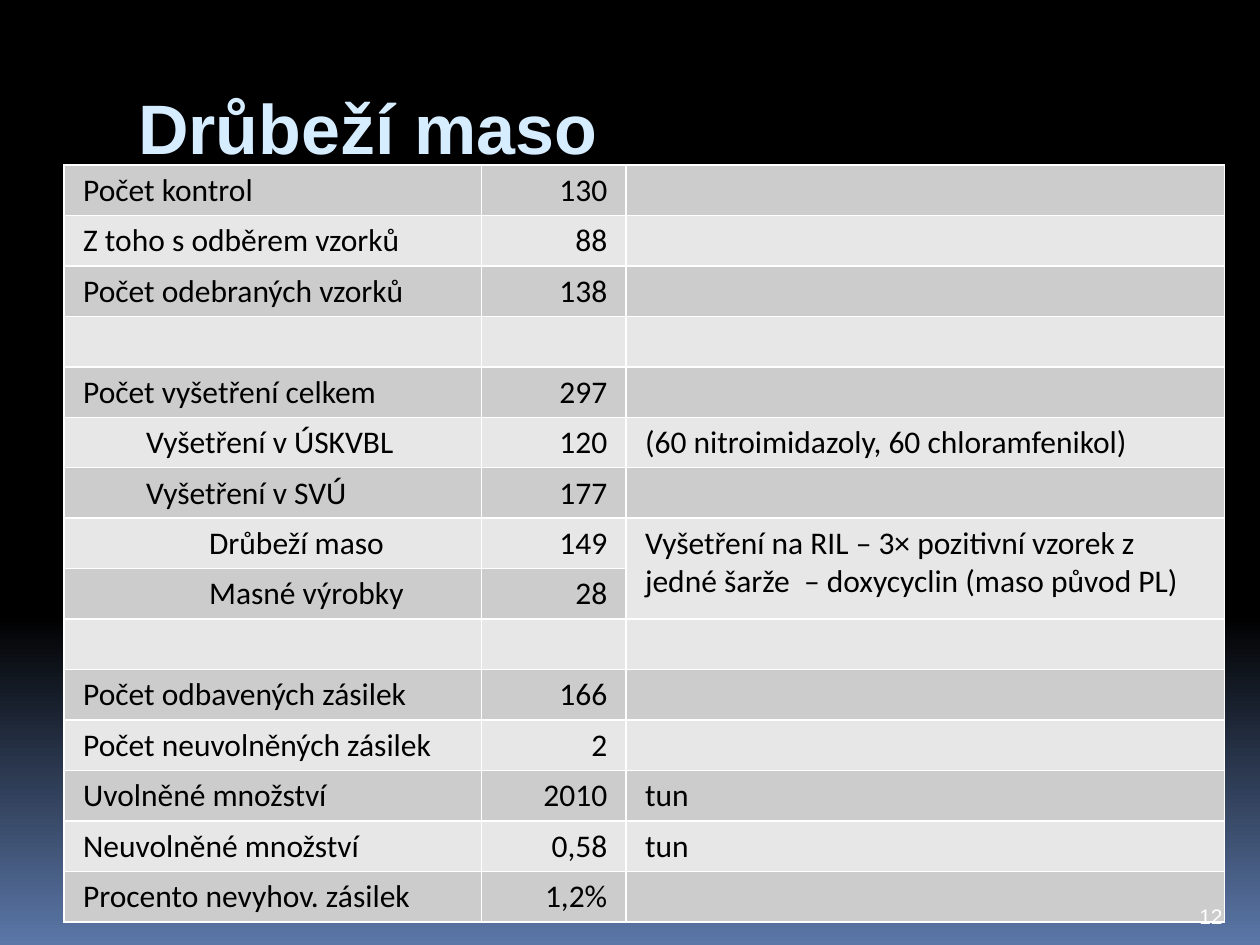
from copy import deepcopy
from pptx import Presentation
from pptx.dml.color import RGBColor
from pptx.enum.text import MSO_ANCHOR, PP_ALIGN
from pptx.oxml import parse_xml
from pptx.oxml.ns import nsdecls, qn
from pptx.util import Inches, Pt

BLACK = RGBColor(0x00, 0x00, 0x00)
BLUE = RGBColor(0x5B, 0x77, 0xA8)
PALE = RGBColor(0xD6, 0xEC, 0xFF)
WHITE = RGBColor(0xFF, 0xFF, 0xFF)
DARK = RGBColor(0xCC, 0xCC, 0xCC)
LIGHT = RGBColor(0xE7, 0xE7, 0xE7)

ROWS = [
    (0, "Počet kontrol", "130", ""),
    (0, "Z toho s odběrem vzorků", "88", ""),
    (0, "Počet odebraných vzorků", "138", ""),
    (0, "", "", ""),
    (0, "Počet vyšetření celkem", "297", ""),
    (1, "Vyšetření v ÚSKVBL", "120", "(60 nitroimidazoly, 60 chloramfenikol)"),
    (1, "Vyšetření v SVÚ", "177", ""),
    (2, "Drůbeží maso", "149",
     "Vyšetření na RIL – 3× pozitivní vzorek z jedné šarže  – doxycyclin (maso původ PL)"),
    (2, "Masné výrobky", "28", ""),
    (0, "", "", ""),
    (0, "Počet odbavených zásilek", "166", ""),
    (0, "Počet neuvolněných zásilek", "2", ""),
    (0, "Uvolněné množství", "2010", "tun"),
    (0, "Neuvolněné množství", "0,58", "tun"),
    (0, "Procento nevyhov. zásilek", "1,2%", ""),
]


def add_text(slide, text, left, top, width, height, size, color):
    box = slide.shapes.add_textbox(Inches(left), Inches(top), Inches(width), Inches(height))
    frame = box.text_frame
    frame.word_wrap = True
    frame.text = text
    font = frame.paragraphs[0].runs[0].font
    font.name, font.size = "Arial", Pt(size)
    font.color.rgb = color
    return frame


def add_edges(cell):
    props = cell._tc.get_or_add_tcPr()
    for spot, side in enumerate(("lnL", "lnR", "lnT", "lnB")):
        props.insert(spot, parse_xml(
            f'<a:{side} {nsdecls("a")} w="{Pt(1)}"><a:solidFill>'
            f'<a:srgbClr val="{WHITE}"/></a:solidFill></a:{side}>'))


deck = Presentation()
deck.slide_width, deck.slide_height = Inches(10), Inches(7.5)
slide = deck.slides.add_slide(deck.slide_layouts[6])

fill = slide.background.fill
fill.gradient()
fill.gradient_angle = 270
first = next(slide.element.iter(qn("a:gs")))
first.addnext(deepcopy(first))
for stop, (place, color) in zip(fill.gradient_stops, [(0, BLACK), (0.65, BLACK), (1, BLUE)]):
    stop.position = place
    stop.color.rgb = color

title = add_text(slide, "Drůbeží maso", 1, 0.56, 8.5, 1, 40, PALE)
title.margin_top = Inches(0.11)
title.paragraphs[0].runs[0].font.bold = True

frame = slide.shapes.add_table(len(ROWS), 3, Inches(0.51), Inches(1.31), Inches(9.21), Inches(6))
table = frame.table
table.first_row = table.horz_banding = False
for col, width in zip(table.columns, (3.31, 1.15, 4.75)):
    col.width = Inches(width)

for row, (level, *texts) in enumerate(ROWS):
    table.rows[row].height = Inches(0.4)
    for col, text in enumerate(texts):
        cell = table.cell(row, col)
        cell.fill.solid()
        cell.fill.fore_color.rgb = LIGHT if row % 2 else DARK
        cell.margin_left = cell.margin_right = Inches(0.15)
        cell.margin_top = cell.margin_bottom = Inches(0.05)
        add_edges(cell)
        para = cell.text_frame.paragraphs[0]
        para.text = text
        para.font.size = Pt(18)
        if col == 0 and level:
            para.level = level
            props = para._p.get_or_add_pPr()
            props.set("marL", str(Inches(0.5 * level)))
            props.set("indent", "0")
        if col == 1:
            para.alignment = PP_ALIGN.RIGHT
        for run in para.runs:
            run.font.name, run.font.size = "Calibri", Pt(18)
            run.font.color.rgb = BLACK
table.cell(7, 2).merge(table.cell(8, 2))

number = add_text(slide, "12", 9.42, 7.02, 0.5, 0.4, 12, WHITE)
number.vertical_anchor = MSO_ANCHOR.BOTTOM

deck.save("out.pptx")
